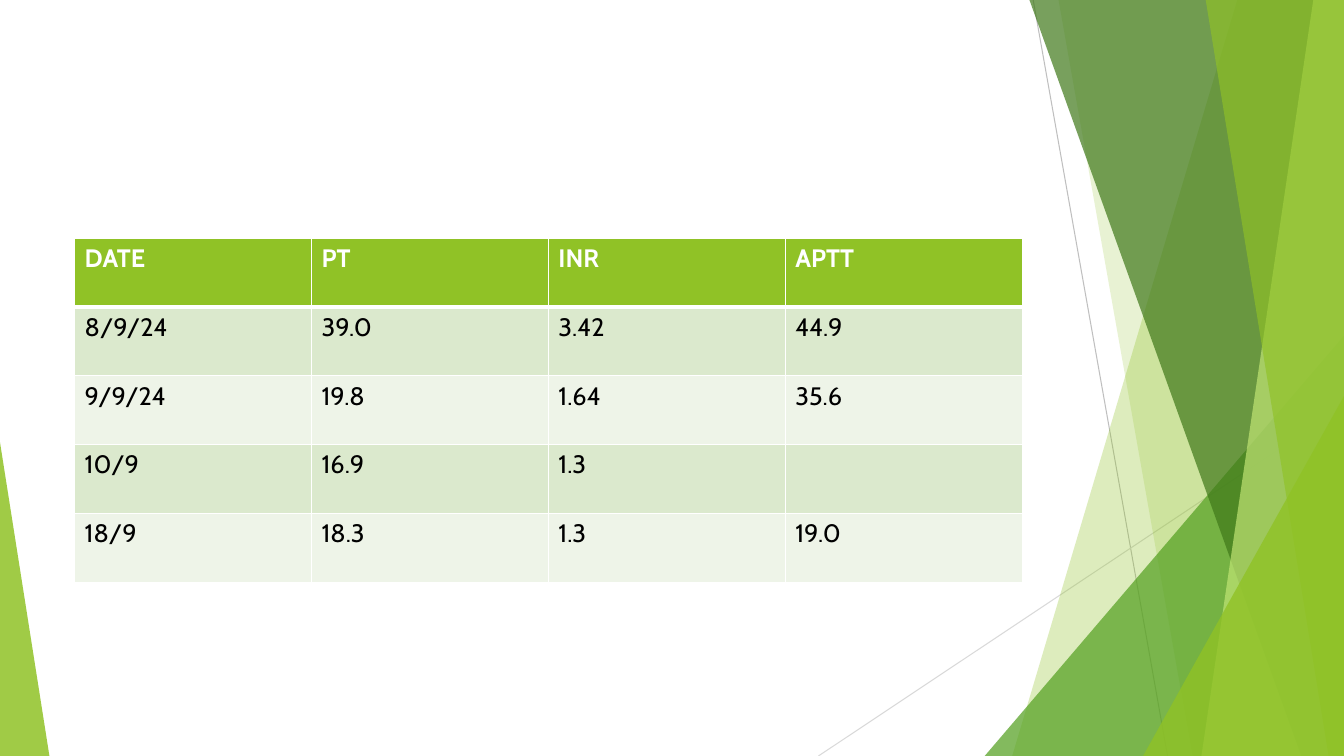
from lxml import etree
from pptx import Presentation
from pptx.dml.color import RGBColor
from pptx.enum.shapes import MSO_CONNECTOR, MSO_SHAPE
from pptx.oxml import parse_xml
from pptx.oxml.ns import nsdecls, qn
from pptx.util import Pt

WHITE = RGBColor(0xFF, 0xFF, 0xFF)
BLACK = RGBColor(0x00, 0x00, 0x00)
LIME = RGBColor(0x90, 0xC2, 0x26)
GREEN = RGBColor(0x54, 0xA0, 0x21)
FOREST = RGBColor(0x3F, 0x78, 0x19)
PALE_LIME = RGBColor(0xC0, 0xE4, 0x74)
GREY = RGBColor(0xBF, 0xBF, 0xBF)
LIGHT_GREY = RGBColor(0xD9, 0xD9, 0xD9)
BAND_DARK = RGBColor(0xDB, 0xE9, 0xCD)
BAND_LIGHT = RGBColor(0xEE, 0xF4, 0xE8)

W, H = 960, 540
TOP = -0.7


def write(tf, text, size=18, color=BLACK, bold=False, font="Cabin"):
    r = tf.paragraphs[0].add_run()
    r.text = text
    r.font.size = Pt(size)
    r.font.name = font
    r.font.bold = bold
    r.font.color.rgb = color


def paint(sp, color, opacity):
    sp.shadow.inherit = False
    sp.line.fill.background()
    sp.fill.solid()
    sp.fill.fore_color.rgb = color
    clr = sp._element.spPr.find(qn("a:solidFill")).find(qn("a:srgbClr"))
    etree.SubElement(clr, qn("a:alpha")).set("val", str(opacity * 1000))


prs = Presentation()
prs.slide_width, prs.slide_height = Pt(W), Pt(H)
s = prs.slides.add_slide(prs.slide_layouts[6])

for x1, y1, x2, y2, color in [
    (738, 0, 834, H, GREY),
    (W, 290, 584.6, H, LIGHT_GREY),
]:
    ln = s.shapes.add_connector(MSO_CONNECTOR.STRAIGHT, Pt(x1), Pt(y1), Pt(x2), Pt(y2))
    ln.line.color.rgb = color
    ln.line.width = Pt(0.75)
    etree.SubElement(ln._element.spPr, qn("a:effectLst"))

facets = [
    ("band", (884, 723), LIME, 30),
    ("band", (756, 851.8), LIME, 20),
    ("triangle", (703.4, 239.8, 256.6, 1), GREEN, 72),
    ("band", (735.1, 929.5), FOREST, 70),
    ("band", (938.2, 858.2), PALE_LIME, 70),
    ("band", (861.1, 949), LIME, 65),
    ("triangle", (816.5, 283, 143.5, 1), LIME, 80),
    ("triangle", (0, 316, 35.3, 0), LIME, 85),
]
for kind, geometry, color, opacity in facets:
    if kind == "band":
        top_x, bottom_x = geometry
        fb = s.shapes.build_freeform(Pt(top_x), Pt(TOP))
        fb.add_line_segments(
            [(Pt(W), Pt(TOP)), (Pt(W), Pt(H)), (Pt(bottom_x), Pt(H))], close=True)
        sp = fb.convert_to_shape()
    else:
        x, y, width, apex = geometry
        sp = s.shapes.add_shape(
            MSO_SHAPE.ISOSCELES_TRIANGLE, Pt(x), Pt(y), Pt(width), Pt(H - y))
        sp.adjustments[0] = apex
    paint(sp, color, opacity)

results = [
    ("DATE", "PT", "INR", "APTT"),
    ("8/9/24", "39.0", "3.42", "44.9"),
    ("9/9/24", "19.8", "1.64", "35.6"),
    ("10/9", "16.9", "1.3", ""),
    ("18/9", "18.3", "1.3", "19.0"),
]
table = s.shapes.add_table(
    len(results), len(results[0]), Pt(53.3), Pt(170), Pt(676.8), Pt(246)).table
for i, row in enumerate(results):
    header = i == 0
    fill = LIME if header else BAND_DARK if i % 2 else BAND_LIGHT
    for j, text in enumerate(row):
        cell = table.cell(i, j)
        cell.fill.solid()
        cell.fill.fore_color.rgb = fill
        if text:
            write(cell.text_frame, text, color=WHITE if header else BLACK, bold=header)
        tcPr = cell._tc.get_or_add_tcPr()
        for k, side in enumerate(("lnL", "lnR", "lnT", "lnB")):
            thick = (i, side) in [(0, "lnB"), (1, "lnT")]
            tcPr.insert(k, parse_xml(
                f'<a:{side} {nsdecls("a")} w="{Pt(3 if thick else 1)}">'
                f'<a:solidFill><a:srgbClr val="{WHITE}"/></a:solidFill></a:{side}>'))

prs.save("out.pptx")
